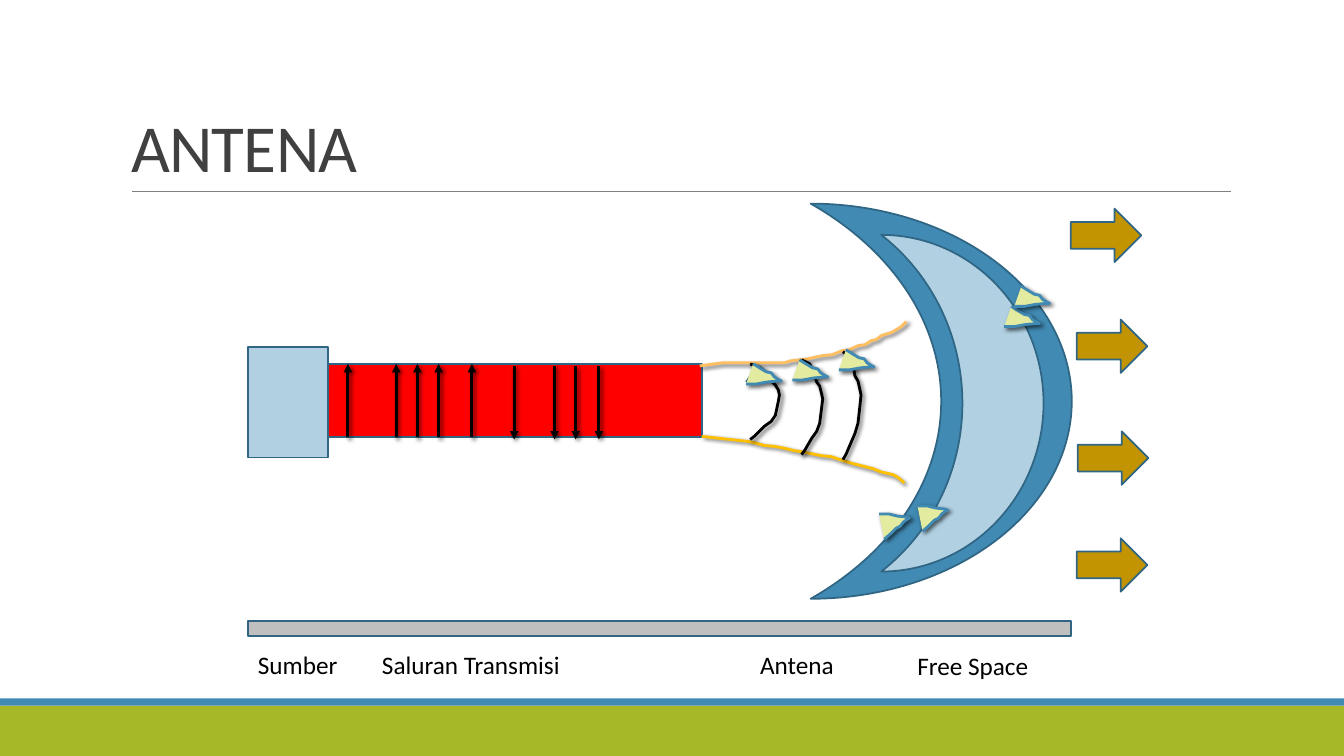
from dataclasses import dataclass

from lxml.etree import SubElement as Sub
from pptx import Presentation
from pptx.dml.color import RGBColor as RGB
from pptx.enum.shapes import MSO_CONNECTOR as Link, MSO_SHAPE as Kind
from pptx.enum.text import MSO_ANCHOR as Anchor, MSO_AUTO_SIZE as Fit, PP_ALIGN as Align
from pptx.oxml.ns import qn
from pptx.util import Emu, Pt

PX = 9144
FONT = "Calibri"
BLACK = RGB(0, 0, 0)
GREY = RGB(0x80, 0x80, 0x80)
SILVER = RGB(0xBF, 0xBF, 0xBF)
DARK = RGB(0x40, 0x40, 0x40)
GREEN = RGB(0xA6, 0xB7, 0x27)
BLUE = RGB(0x41, 0x8A, 0xB3)
PALE = RGB(0xB1, 0xD1, 0xE3)
NAVY = RGB(0x30, 0x66, 0x84)
RED = RGB(0xFF, 0, 0)
PEACH = RGB(0xFF, 0xBF, 0x61)
AMBER = RGB(0xFF, 0xC0, 0)
LIME = RGB(0xE2, 0xEB, 0xA0)
OCHRE = RGB(0xC2, 0x94, 0x01)

Points = tuple[tuple[int, int], ...]


@dataclass(frozen=True)
class Block:
    left: int
    top: int
    width: int
    height: int
    fill: RGB
    kind: Kind = Kind.RECTANGLE
    edge: RGB | None = NAVY
    turn: int = 0


@dataclass(frozen=True)
class Curve:
    points: Points
    color: RGB
    width: float = 2
    fill: RGB | None = None
    shade: bool = True


@dataclass(frozen=True)
class Label:
    text: str
    left: int
    top: int
    width: int


def px(size: int) -> Emu:
    return Emu(size * PX)


def add_effect(item, shade: bool) -> None:
    effect = Sub(item._element.spPr, qn("a:effectLst"))
    if shade:
        cast = Sub(effect, qn("a:outerShdw"), blurRad=str(Pt(3)), dist=str(Pt(2)),
                   dir=str(45 * 60000), algn="tl", rotWithShape="0")
        tint = Sub(cast, qn("a:srgbClr"), val=str(BLACK))
        Sub(tint, qn("a:alpha"), val="60000")


def add_block(shapes, block: Block) -> None:
    shape = shapes.add_shape(block.kind, px(block.left), px(block.top),
                             px(block.width), px(block.height))
    shape.rotation = block.turn
    shape.fill.solid()
    shape.fill.fore_color.rgb = block.fill
    if block.edge is None:
        shape.line.fill.background()
    else:
        shape.line.color.rgb = block.edge
        shape.line.width = Pt(1.25)
    shape.shadow.inherit = False


def add_curve(shapes, curve: Curve) -> None:
    start, *rest = curve.points
    path = shapes.build_freeform(*start, scale=PX)
    path.add_line_segments(rest, close=False)
    shape = path.convert_to_shape()
    if curve.fill is None:
        shape.fill.background()
    else:
        shape.fill.solid()
        shape.fill.fore_color.rgb = curve.fill
    shape.line.color.rgb = curve.color
    shape.line.width = Pt(curve.width)
    add_effect(shape, curve.shade)


def add_line(shapes, start: tuple[int, int], end: tuple[int, int],
             color: RGB, width: float, arrow: bool) -> None:
    line = shapes.add_connector(Link.STRAIGHT, *map(px, start + end))
    line.line.color.rgb = color
    line.line.width = Pt(width)
    if arrow:
        Sub(line.line._get_or_add_ln(), qn("a:tailEnd"), type="triangle")
    add_effect(line, arrow)


def add_run(para, text: str, size: int, color: RGB):
    run = para.add_run()
    run.text = text
    run.font.name = FONT
    run.font.size = Pt(size)
    run.font.color.rgb = color
    return run


def add_label(shapes, label: Label) -> None:
    box = shapes.add_textbox(px(label.left), px(label.top), px(label.width), px(40))
    frame = box.text_frame
    frame.word_wrap = False
    frame.auto_size = Fit.SHAPE_TO_FIT_TEXT
    add_run(frame.paragraphs[0], label.text, 18, BLACK)


def set_title(title, text: str) -> None:
    title.left, title.top, title.width, title.height = map(px, (120, 31, 1100, 159))
    frame = title.text_frame
    frame.auto_size = Fit.NONE
    frame.vertical_anchor = Anchor.BOTTOM
    para = frame.paragraphs[0]
    para.alignment = Align.LEFT
    para.line_spacing = 0.85
    run = add_run(para, text, 48, DARK)
    run.font._element.set("spc", "-50")


def make_barb(left: int, top: int, form: Points) -> Curve:
    return Curve(tuple((left + x, top + y) for x, y in form), BLUE, fill=LIME)


BASE = (
    Block(0, 700, 1333, 50, GREEN, edge=None),
    Block(0, 693, 1333, 7, BLUE, edge=None),
)
FEED = (
    Block(246, 344, 79, 110, PALE),
    Block(325, 361, 371, 73, RED),
)
HORN = (
    Curve(((694, 363), (716, 360), (778, 360), (784, 358), (801, 356), (815, 353),
           (825, 352), (835, 348), (842, 347), (851, 343), (858, 342), (864, 338),
           (869, 337), (874, 333), (884, 330), (894, 324), (899, 319)), PEACH),
    Curve(((696, 433), (742, 438), (751, 440), (758, 442), (769, 443), (779, 445),
           (787, 447), (794, 448), (814, 452), (824, 453), (833, 456), (846, 460),
           (866, 465), (873, 468), (886, 471), (891, 474), (897, 479)), AMBER),
)
WAVES = (
    Curve(((795, 357), (803, 361), (805, 365), (808, 373), (810, 379), (813, 383),
           (815, 391), (816, 396), (815, 404), (813, 420), (810, 428), (805, 435),
           (798, 447), (795, 451)), BLACK),
    Curve(((836, 349), (842, 353), (845, 358), (847, 367), (848, 373), (851, 378),
           (853, 387), (854, 392), (853, 402), (851, 420), (848, 430), (845, 437),
           (839, 451), (836, 456)), BLACK),
    Curve(((744, 361), (754, 365), (758, 368), (762, 374), (765, 378), (769, 382),
           (772, 387), (773, 392), (772, 398), (769, 412), (765, 418), (758, 423),
           (748, 433), (744, 436)), BLACK),
    Curve(((749, 361), (744, 373), (740, 379)), NAVY, 1.25, shade=False),
)
DOWN = ((7, 0), (15, 5), (20, 8), (25, 9), (28, 13), (33, 16), (35, 17),
        (32, 17), (21, 18), (10, 20), (0, 20))
RISE = ((5, 26), (12, 20), (17, 15), (21, 13), (24, 9), (28, 6), (30, 5),
        (27, 4), (18, 3), (10, 1), (0, 1))
NEAR = ((740, 361, DOWN), (786, 357, DOWN), (832, 347, DOWN))
FAR = ((996, 304, DOWN), (1006, 284, DOWN), (910, 501, RISE), (872, 509, RISE))
MOONS = (
    Block(804, 202, 259, 392, BLUE, Kind.MOON, turn=180),
    Block(874, 233, 161, 334, PALE, Kind.MOON, turn=180),
)
BAR = Block(246, 616, 816, 15, SILVER)
RAYS = ((1062, 207), (1068, 317), (1069, 428), (1068, 534))
LABELS = (
    Label("Saluran Transmisi", 369, 639, 198),
    Label("Sumber", 246, 639, 100),
    Label("Antena", 744, 639, 94),
    Label("Free Space", 900, 640, 132),
)


def main() -> None:
    deck = Presentation()
    deck.slide_width, deck.slide_height = px(1333), px(750)
    shapes = deck.slides.add_slide(deck.slide_layouts[5]).shapes
    set_title(shapes.title, "ANTENA")
    for block in BASE:
        add_block(shapes, block)
    add_line(shapes, (131, 190), (1221, 190), GREY, 0.5, False)
    for block in FEED:
        add_block(shapes, block)
    for curve in HORN:
        add_curve(shapes, curve)
    for x in (345, 393, 414, 435, 468):
        add_line(shapes, (x, 434), (x, 361), BLACK, 2, True)
    for x in (510, 550, 571, 594):
        add_line(shapes, (x, 363), (x, 436), BLACK, 2, True)
    for curve in WAVES:
        add_curve(shapes, curve)
    for barb in NEAR:
        add_curve(shapes, make_barb(*barb))
    for moon in MOONS:
        add_block(shapes, moon)
    for barb in FAR:
        add_curve(shapes, make_barb(*barb))
    add_block(shapes, BAR)
    for label in LABELS:
        add_label(shapes, label)
    for left, top in RAYS:
        add_block(shapes, Block(left, top, 70, 53, OCHRE, Kind.RIGHT_ARROW))
    deck.save("out.pptx")


if __name__ == "__main__":
    main()
